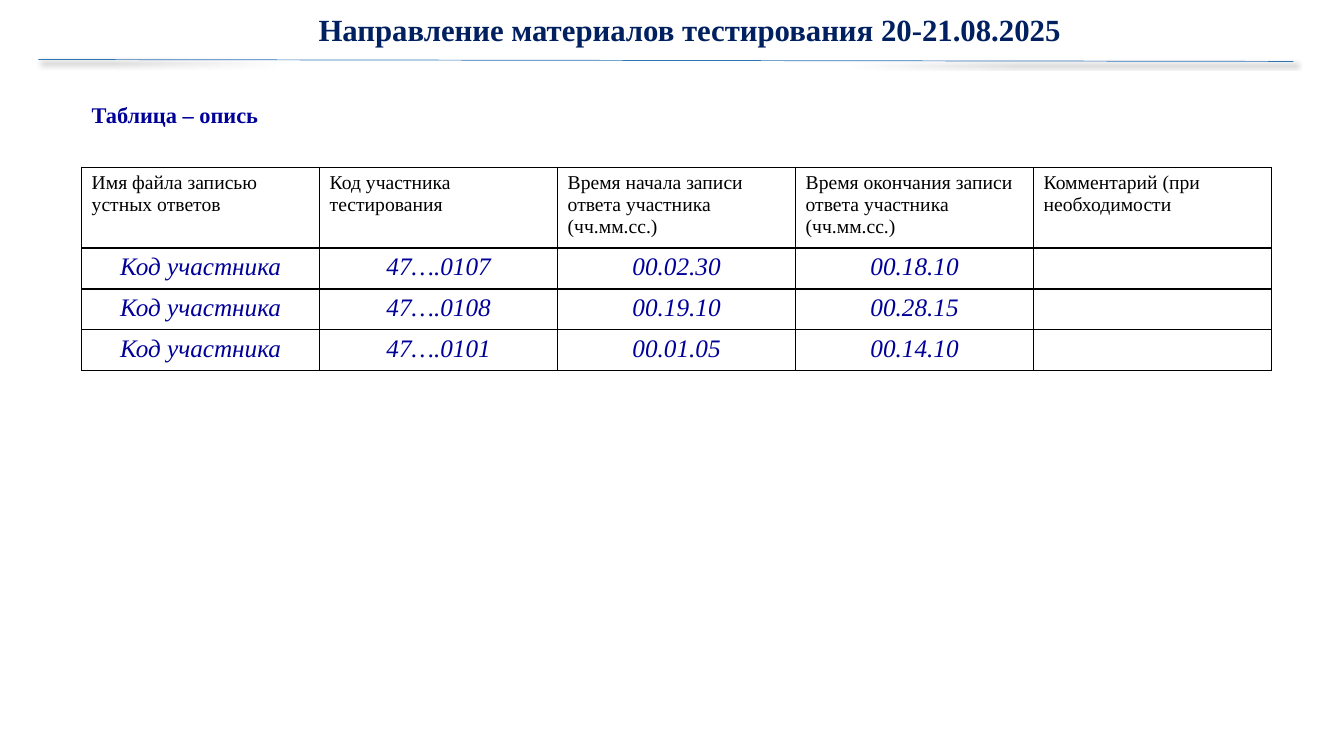
from dataclasses import dataclass

import lxml.etree
import pptx
import pptx.dml.color
import pptx.enum.shapes
import pptx.enum.text
import pptx.oxml.ns
import pptx.util

Pt = pptx.util.Pt
qn = pptx.oxml.ns.qn
RGB = pptx.dml.color.RGBColor
ALIGN = pptx.enum.text.PP_ALIGN


@dataclass(frozen=True)
class TextStyle:
    size: float
    color: str
    bold: bool = False
    italic: bool = False
    align: ALIGN = ALIGN.LEFT


@dataclass(frozen=True)
class Theme:
    font: str = "Times New Roman"
    rule: str = "2E75B6"
    black: str = "000000"
    title: TextStyle = TextStyle(22, "002060", bold=True, align=ALIGN.CENTER)
    caption: TextStyle = TextStyle(16, "000099", bold=True)
    header: TextStyle = TextStyle(14, "000000")
    body: TextStyle = TextStyle(18, "000099", italic=True, align=ALIGN.CENTER)


@dataclass(frozen=True)
class Box:
    left: float
    top: float
    width: float
    height: float

    def points(self) -> list[int]:
        return [Pt(v) for v in (self.left, self.top, self.width, self.height)]


@dataclass(frozen=True)
class Recording:
    code: str
    start: str
    end: str
    name: str = "Код участника"
    comment: str = ""

    def cells(self) -> list[str]:
        return [self.name, self.code, self.start, self.end, self.comment]


THEME = Theme()
TITLE_BOX = Box(27.4, 4.3, 930.2, 33.8)
CAPTION_BOX = Box(58.3, 68.4, 239.8, 26.6)
COLUMN_WIDTH = 170
HEADER_HEIGHT = 57.6
ROW_HEIGHT = 29.2
HEADERS = [
    "Имя файла записью устных ответов",
    "Код участника тестирования",
    "Время начала записи ответа участника (чч.мм.сс.)",
    "Время окончания записи ответа участника\n(чч.мм.сс.)",
    "Комментарий (при необходимости",
]
RECORDINGS = [
    Recording("47….0107", "00.02.30", "00.18.10"),
    Recording("47….0108", "00.19.10", "00.28.15"),
    Recording("47….0101", "00.01.05", "00.14.10"),
]


def write(tf: pptx.text.text.TextFrame, text: str, style: TextStyle) -> None:
    tf.word_wrap = True
    for i, line in enumerate(text.split("\n")):
        p = tf.add_paragraph() if i else tf.paragraphs[0]
        p.alignment = style.align
        p.font.size = Pt(style.size)
        if not line:
            continue
        r = p.add_run()
        r.text = line
        r.font.name = THEME.font
        r.font.size = Pt(style.size)
        r.font.bold = style.bold
        r.font.italic = style.italic
        r.font.color.rgb = RGB.from_string(style.color)


def add_title(s: pptx.slide.Slide, text: str) -> None:
    sp = s.shapes.title
    sp.left, sp.top, sp.width, sp.height = TITLE_BOX.points()
    sp.text_frame.vertical_anchor = pptx.enum.text.MSO_ANCHOR.TOP
    write(sp.text_frame, text, THEME.title)
    sp.text_frame.auto_size = pptx.enum.text.MSO_AUTO_SIZE.SHAPE_TO_FIT_TEXT
    sp.text_frame.paragraphs[0].line_spacing = 1.0
    sp.text_frame.paragraphs[0].space_before = Pt(0)


def add_caption(s: pptx.slide.Slide, text: str) -> None:
    tf = s.shapes.add_textbox(*CAPTION_BOX.points()).text_frame
    write(tf, text, THEME.caption)
    tf.auto_size = pptx.enum.text.MSO_AUTO_SIZE.SHAPE_TO_FIT_TEXT


def add_rule(s: pptx.slide.Slide) -> None:
    sp = s.shapes.add_connector(
        pptx.enum.shapes.MSO_CONNECTOR.STRAIGHT, Pt(27.4), Pt(42.5), Pt(923.8), Pt(43.9)
    )
    sp.line.color.rgb = RGB.from_string(THEME.rule)
    sp.line.width = Pt(0.5)
    effects = lxml.etree.SubElement(sp._element.spPr, qn("a:effectLst"))
    shadow = lxml.etree.SubElement(
        effects, qn("a:outerShdw"), blurRad=str(Pt(4)), dist=str(Pt(3)),
        dir="2700000", algn="tl", rotWithShape="0",
    )
    color = lxml.etree.SubElement(shadow, qn("a:srgbClr"), val=THEME.black)
    lxml.etree.SubElement(color, qn("a:alpha"), val="40000")


def add_borders(cell: pptx.table._Cell) -> None:
    tc_pr = cell._tc.get_or_add_tcPr()
    for side in ("L", "R", "T", "B"):
        ln = lxml.etree.SubElement(tc_pr, qn(f"a:ln{side}"), w=str(Pt(1)))
        fill = lxml.etree.SubElement(ln, qn("a:solidFill"))
        lxml.etree.SubElement(fill, qn("a:srgbClr"), val=THEME.black)


def add_inventory(s: pptx.slide.Slide) -> None:
    rows = [HEADERS] + [recording.cells() for recording in RECORDINGS]
    box = Box(58.3, 119.5, COLUMN_WIDTH * len(HEADERS),
              HEADER_HEIGHT + ROW_HEIGHT * len(RECORDINGS))
    table = s.shapes.add_table(len(rows), len(HEADERS), *box.points()).table
    table.first_row = False
    table.horz_banding = False
    for column in table.columns:
        column.width = Pt(COLUMN_WIDTH)
    for i, texts in enumerate(rows):
        table.rows[i].height = Pt(ROW_HEIGHT if i else HEADER_HEIGHT)
        for j, text in enumerate(texts):
            cell = table.cell(i, j)
            add_borders(cell)
            cell.fill.background()
            write(cell.text_frame, text, THEME.body if i else THEME.header)


def main() -> None:
    prs = pptx.Presentation()
    prs.slide_width, prs.slide_height = Pt(960), Pt(540)
    s = prs.slides.add_slide(prs.slide_layouts.get_by_name("Title Only"))
    add_title(s, "Направление материалов тестирования 20-21.08.2025")
    add_rule(s)
    add_inventory(s)
    add_caption(s, "Таблица – опись")
    prs.save("out.pptx")


if __name__ == "__main__":
    main()
